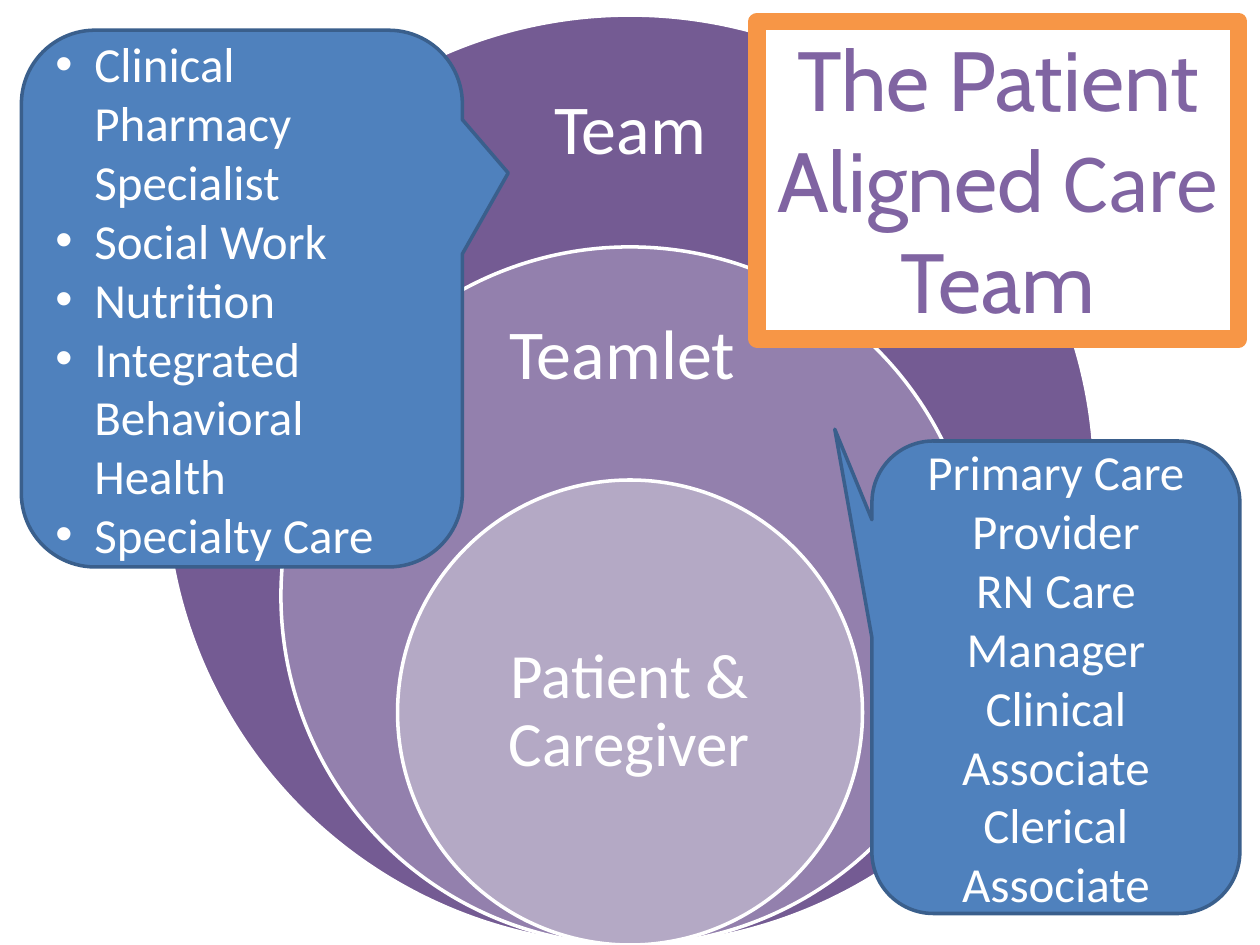
from lxml import etree
from pptx import Presentation
from pptx import util as u
from pptx.dml.color import RGBColor
from pptx.enum import shapes, text
from pptx.oxml import ns

KIND = shapes.MSO_SHAPE
WHITE, BLUE, NAVY = "FFFFFF", "4F81BD", "3A5F8C"
PURPLE, ORANGE = "8064A2", "F79646"
MID, BASE = 5, 7.5

RINGS = [
    (7.38, "745B93", "Team", 40, (3.71, 0.49, 2.58, 1.11), 0.31),
    (5.54, "9380AD", "Teamlet ", 40, (3.71, 2.31, 2.58, 1.04), 0.31),
    (3.69, "B4A9C5", "Patient & Caregiver", 36, (3.69, 4.73, 2.61, 1.85), 0.28),
]
CALLS = [
    ((6.92, 3.5, 2.92, 3.75), (-0.601, -0.525, 0.167), False,
     ["Primary Care Provider", "RN Care Manager", "Clinical Associate",
      "Clerical Associate"]),
    ((0.17, 0.24, 3.5, 4.26), (0.604, -0.234, 0.167), True,
     ["Clinical Pharmacy Specialist", "Social Work", "Nutrition",
      "Integrated Behavioral Health", "Specialty Care"]),
]
TITLE = [("The Patient Aligned ", "Cabin"), ("Care", "Calibri"), (" Team", "Cabin")]


def tint(code):
    """Turn a hex string into a colour."""
    return RGBColor.from_string(code)


def place(box):
    """Turn a box in inches into lengths."""
    return [u.Inches(n) for n in box]


def draw(host, kind, box, fill, edge, width):
    """Add a flat preset shape with a fill and an outline."""
    shape = host.add_shape(kind, *place(box))
    shape.shadow.inherit = False
    shape.fill.solid()
    shape.fill.fore_color.rgb = tint(fill)
    shape.line.color.rgb = tint(edge)
    shape.line.width = u.Pt(width)
    return shape


def dot(para):
    """Give a paragraph a bullet with a hanging indent."""
    props = para._p.get_or_add_pPr()
    props.set("marL", str(u.Inches(0.31)))
    props.set("indent", str(-u.Inches(0.31)))
    font = etree.SubElement(props, ns.qn("a:buFont"))
    font.set("typeface", "Arial")
    etree.SubElement(props, ns.qn("a:buChar")).set("char", "•")


def write(shape, paras, size=28, color=WHITE, inset=None, space=None,
          bullet=False, anchor=text.MSO_ANCHOR.MIDDLE):
    """Fill a shape with paragraphs, each a list of (words, font) runs."""
    frame = shape.text_frame
    frame.word_wrap = True
    frame.vertical_anchor = anchor
    if inset is not None:
        frame.margin_left = frame.margin_right = u.Inches(inset)
        frame.margin_top = frame.margin_bottom = u.Inches(inset)
    for i, runs in enumerate(paras):
        para = frame.add_paragraph() if i else frame.paragraphs[0]
        para.alignment = text.PP_ALIGN.LEFT if bullet else text.PP_ALIGN.CENTER
        if space:
            para.line_spacing = space
        if bullet:
            dot(para)
        for words, face in runs:
            run = para.add_run()
            run.text = words
            run.font.name = face
            run.font.size = u.Pt(size)
            run.font.color.rgb = tint(color)


def main():
    """Build and save the care team slide."""
    deck = Presentation()
    deck.slide_width, deck.slide_height = u.Inches(10), u.Inches(7.5)
    slide = deck.slides.add_slide(deck.slide_layouts[6])

    group = slide.shapes.add_group_shape().shapes
    for wide, fill, label, size, box, inset in RINGS:
        ring = (MID - wide / 2, BASE - wide, wide, wide)
        draw(group, KIND.OVAL, ring, fill, WHITE, 2)
        write(group.add_textbox(*place(box)), [[(label, "Calibri")]],
              size=size, inset=inset, space=0.9)

    for box, tips, bullet, lines in CALLS:
        call = draw(slide.shapes, KIND.ROUNDED_RECTANGULAR_CALLOUT, box,
                    BLUE, NAVY, 2)
        for i, tip in enumerate(tips):
            call.adjustments[i] = tip
        write(call, [[(line, "Calibri")] for line in lines], bullet=bullet)

    title = draw(slide.shapes, KIND.RECTANGLE, (6.01, 0.17, 3.82, 2.52),
                 WHITE, ORANGE, 10)
    write(title, [TITLE], size=48, color=PURPLE, anchor=text.MSO_ANCHOR.TOP)
    title.text_frame.auto_size = text.MSO_AUTO_SIZE.SHAPE_TO_FIT_TEXT
    deck.save("out.pptx")


if __name__ == "__main__":
    main()
